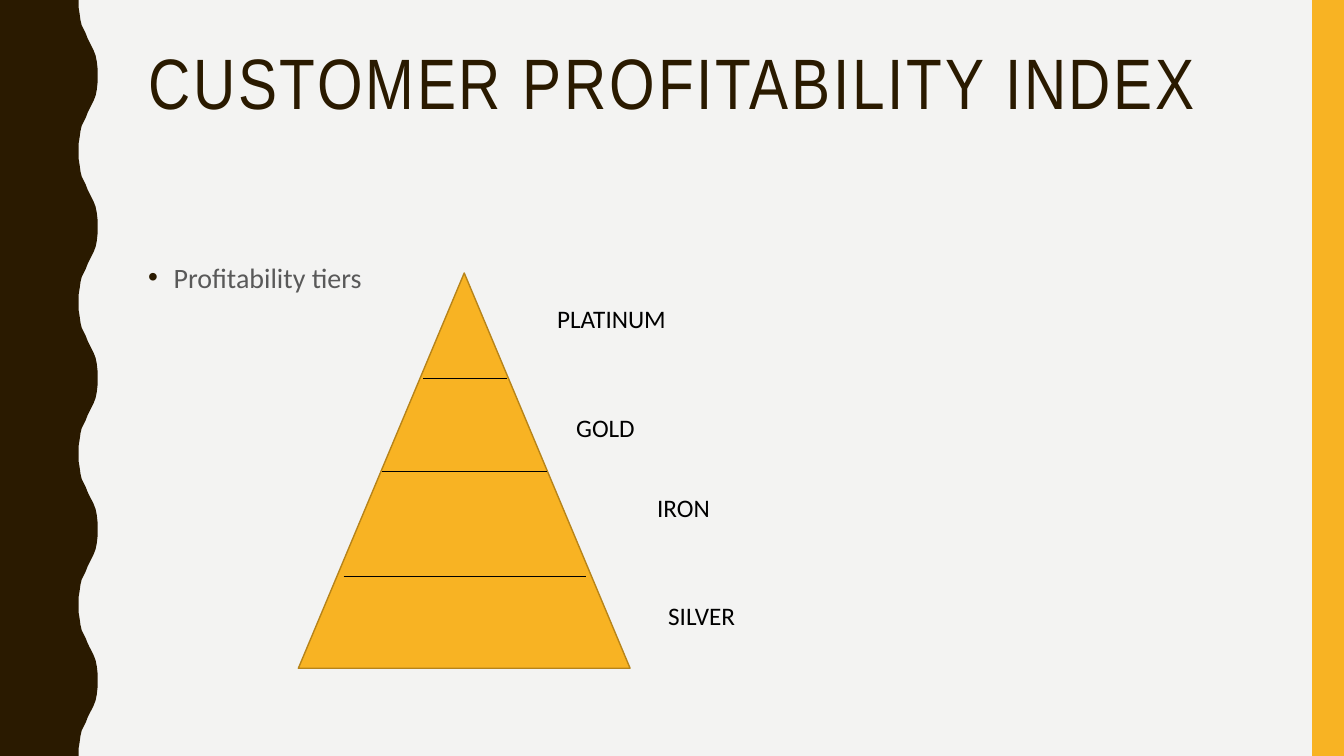
"""Build the customer profitability index slide."""
from lxml import etree
from pptx import Presentation
from pptx import util as u
from pptx.dml.color import RGBColor
from pptx.enum import shapes, text
from pptx.oxml import ns

BROWN = RGBColor(0x2A, 0x1A, 0x00)
GOLD = RGBColor(0xF8, 0xB3, 0x23)
DARK_GOLD = RGBColor(0xB7, 0x84, 0x1A)
PAPER = RGBColor(0xF3, 0xF3, 0xF2)
GREY = RGBColor(0x59, 0x59, 0x59)
BLACK = RGBColor(0x00, 0x00, 0x00)

WIDTH, HEIGHT = 33.87, 19.05
WAVE_LENGTH = 3.81
HALF_WAVE = [(1.98, 0), (1.98, 0.18), (2.01, 0.36), (2.03, 0.51), (2.06, 0.64),
             (2.11, 0.74), (2.16, 0.84), (2.21, 0.97), (2.26, 1.07), (2.31, 1.17),
             (2.36, 1.27), (2.41, 1.4), (2.44, 1.55), (2.46, 1.73), (2.46, 1.9)]
DIVIDERS = [(12.78, 10.67, 9.53), (9.63, 13.79, 11.89), (8.66, 14.76, 14.53)]
TIERS = [("PLATINUM", 13.79, 7.52, 6.12), ("GOLD", 14.27, 10.26, 4.19),
         ("IRON", 16.31, 12.27, 3.2), ("SILVER", 16.59, 15.01, 3.78)]


def box(*lengths):
    """Turn centimetre values into slide lengths."""
    return [u.Cm(length) for length in lengths]


def write(frame, words, size, color, font="Calibri", line_spacing=None,
          space_before=None, tracking=None):
    """Put formatted text in a frame and return its paragraph."""
    frame.word_wrap = True
    frame.vertical_anchor = text.MSO_ANCHOR.TOP
    paragraph = frame.paragraphs[0]
    paragraph.alignment = text.PP_ALIGN.LEFT
    paragraph.line_spacing = line_spacing
    if space_before is not None:
        paragraph.space_before = u.Pt(space_before)
    run = paragraph.add_run()
    run.text = words
    run.font.size = u.Pt(size)
    run.font.name = font
    run.font.color.rgb = color
    if tracking:
        run.font._element.set("spc", str(tracking * 100))
    return paragraph


def add_bullet(paragraph, color, indent):
    """Give a paragraph a coloured round bullet with a hanging indent."""
    properties = paragraph._p.get_or_add_pPr()
    properties.set("marL", str(u.Cm(indent)))
    properties.set("indent", str(-u.Cm(indent)))
    bullet_color = etree.SubElement(properties, ns.qn("a:buClr"))
    etree.SubElement(bullet_color, ns.qn("a:srgbClr"), val=str(color))
    etree.SubElement(properties, ns.qn("a:buFont"), typeface="Arial")
    etree.SubElement(properties, ns.qn("a:buChar"), char="•")


def paint(shape, fill, outline=None):
    """Set a shape's flat fill and optional thin outline."""
    shape.shadow.inherit = False
    shape.fill.solid()
    shape.fill.fore_color.rgb = fill
    if outline is None:
        shape.line.fill.background()
    else:
        shape.line.color.rgb = outline
        shape.line.width = u.Pt(1)


def add_solid(slide, preset, place, fill, outline=None):
    """Add a filled preset shape."""
    paint(slide.shapes.add_shape(preset, *box(*place)), fill, outline)


def add_wavy_edge(slide):
    """Add the brown left band with its repeating wave."""
    returning = [(x, WAVE_LENGTH - y) for x, y in reversed(HALF_WAVE)]
    edge = [box(x, y + wave * WAVE_LENGTH)
            for wave in range(5) for x, y in HALF_WAVE + returning]
    band = slide.shapes.build_freeform(0, 0, scale=1.0)
    band.add_line_segments(edge + [box(0, HEIGHT)], close=True)
    paint(band.convert_to_shape(), BROWN)


def add_divider(slide, start, end, height):
    """Add a thin horizontal line between two tiers."""
    divider = slide.shapes.add_connector(
        shapes.MSO_CONNECTOR.STRAIGHT, *box(start, height, end, height))
    divider.line.color.rgb = BLACK
    divider.line.width = u.Pt(0.5)
    etree.SubElement(divider._element.spPr, ns.qn("a:effectLst"))


def add_tier_label(slide, tier, left, top, width):
    """Add the name of a tier beside the pyramid."""
    frame = slide.shapes.add_textbox(*box(left, top, width, 1.02)).text_frame
    write(frame, tier, size=18, color=BLACK)
    frame.auto_size = text.MSO_AUTO_SIZE.SHAPE_TO_FIT_TEXT


def fill_placeholder(placeholder, place, words, **style):
    """Move a placeholder and write its text."""
    placeholder.left, placeholder.top, placeholder.width, placeholder.height = box(*place)
    placeholder.text_frame.auto_size = text.MSO_AUTO_SIZE.NONE
    return write(placeholder.text_frame, words, **style)


def main():
    """Assemble and save the slide."""
    deck = Presentation()
    deck.slide_width, deck.slide_height = box(WIDTH, HEIGHT)
    slide = deck.slides.add_slide(deck.slide_layouts[1])
    slide.background.fill.solid()
    slide.background.fill.fore_color.rgb = PAPER

    add_wavy_edge(slide)
    add_solid(slide, shapes.MSO_SHAPE.RECTANGLE, (33.07, 0, 0.8, HEIGHT), GOLD)
    fill_placeholder(slide.shapes.title, (3.48, 1.07, 28.27, 4.14),
                     "CUSTOMER PROFITABILITY INDEX", size=51, color=BROWN,
                     font="Arial Narrow", line_spacing=0.9, tracking=2)
    topic = fill_placeholder(slide.placeholders[1], (3.48, 6.35, 28.27, 9.98),
                             "Profitability tiers", size=20, color=GREY,
                             line_spacing=1.1, space_before=7)
    add_bullet(topic, BROWN, indent=0.64)

    add_solid(slide, shapes.MSO_SHAPE.ISOSCELES_TRIANGLE,
              (7.52, 6.88, 8.36, 9.96), GOLD, DARK_GOLD)
    for divider in DIVIDERS:
        add_divider(slide, *divider)
    for tier in TIERS:
        add_tier_label(slide, *tier)
    deck.save("out.pptx")


if __name__ == "__main__":
    main()
